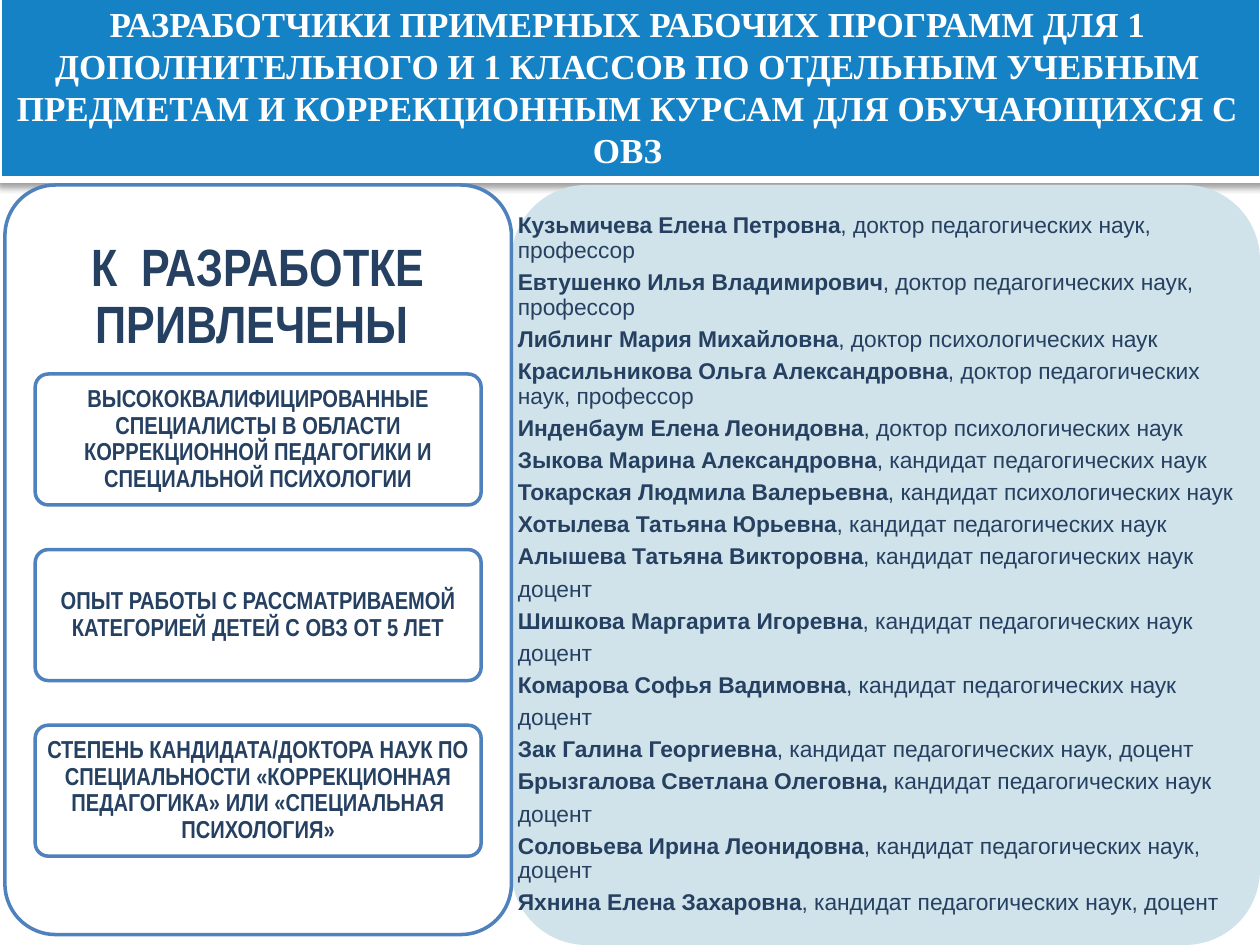
from dataclasses import dataclass

from lxml import etree
from pptx import Presentation
from pptx.dml.color import RGBColor
from pptx.enum import shapes, text
from pptx.oxml import ns
from pptx.util import Cm, Pt


@dataclass(frozen=True)
class Theme:
    band: str = "1682C6"
    panel: str = "D0E3EA"
    outline: str = "4F81BD"
    ink: str = "254061"
    white: str = "FFFFFF"
    title_font: str = "Times New Roman"
    card_font: str = "Arial Narrow"
    list_font: str = "Arial"
    title_size: float = 20
    heading_size: float = 30
    card_size: float = 14
    list_size: float = 13


THEME = Theme()

TITLE = ("РАЗРАБОТЧИКИ ПРИМЕРНЫХ РАБОЧИХ ПРОГРАММ ДЛЯ 1 ДОПОЛНИТЕЛЬНОГО И 1 КЛАССОВ "
         "ПО ОТДЕЛЬНЫМ УЧЕБНЫМ ПРЕДМЕТАМ И КОРРЕКЦИОННЫМ КУРСАМ ДЛЯ ОБУЧАЮЩИХСЯ С ОВЗ")
HEADING = "К  РАЗРАБОТКЕ ПРИВЛЕЧЕНЫ "
REQUIREMENTS = [
    "ВЫСОКОКВАЛИФИЦИРОВАННЫЕ СПЕЦИАЛИСТЫ В ОБЛАСТИ КОРРЕКЦИОННОЙ ПЕДАГОГИКИ "
    "И СПЕЦИАЛЬНОЙ ПСИХОЛОГИИ",
    "ОПЫТ РАБОТЫ С РАССМАТРИВАЕМОЙ КАТЕГОРИЕЙ ДЕТЕЙ С ОВЗ ОТ 5 ЛЕТ",
    "СТЕПЕНЬ КАНДИДАТА/ДОКТОРА НАУК ПО СПЕЦИАЛЬНОСТИ «КОРРЕКЦИОННАЯ ПЕДАГОГИКА» "
    "ИЛИ «СПЕЦИАЛЬНАЯ ПСИХОЛОГИЯ»",
]
DEVELOPERS = [
    ("Кузьмичева Елена Петровна", ", доктор педагогических наук, профессор"),
    ("Евтушенко Илья Владимирович", ", доктор педагогических наук, профессор"),
    ("Либлинг Мария Михайловна", ", доктор психологических наук"),
    ("Красильникова Ольга Александровна", ", доктор педагогических наук, профессор"),
    ("Инденбаум Елена Леонидовна", ", доктор психологических наук"),
    ("Зыкова Марина Александровна", ", кандидат педагогических наук"),
    ("Токарская Людмила Валерьевна", ", кандидат психологических наук"),
    ("Хотылева Татьяна Юрьевна", ", кандидат педагогических наук"),
    ("Алышева Татьяна Викторовна", ", кандидат педагогических наук"),
    ("", "доцент"),
    ("Шишкова Маргарита Игоревна", ", кандидат педагогических наук"),
    ("", "доцент"),
    ("Комарова Софья Вадимовна", ", кандидат педагогических наук"),
    ("", "доцент"),
    ("Зак Галина Георгиевна", ", кандидат педагогических наук, доцент"),
    ("Брызгалова Светлана Олеговна, ", "кандидат педагогических наук"),
    ("", "доцент"),
    ("Соловьева Ирина Леонидовна", ", кандидат педагогических наук, доцент"),
    ("Яхнина Елена Захаровна", ", кандидат педагогических наук, доцент"),
]


def add_text(paragraph, content, font, size, color=THEME.ink, bold=True):
    run = paragraph.add_run()
    run.text = content
    run.font.name, run.font.size, run.font.bold = font, Pt(size), bold
    run.font.color.rgb = RGBColor.from_string(color)


def format_paragraph(paragraph, align, line_spacing=0.9, space_after=0):
    paragraph.alignment = align
    paragraph.line_spacing = line_spacing
    paragraph.space_before, paragraph.space_after = Pt(0), Pt(space_after)


def format_frame(shape, margin_x, margin_y, anchor=text.MSO_ANCHOR.MIDDLE):
    frame = shape.text_frame
    frame.word_wrap = True
    frame.auto_size = text.MSO_AUTO_SIZE.NONE
    frame.vertical_anchor = anchor
    frame.margin_left = frame.margin_right = Cm(margin_x)
    frame.margin_top = frame.margin_bottom = Cm(margin_y)
    return frame


def add_box(slide, kind, left, top, width, height, fill, line=None, line_width=2):
    box = slide.shapes.add_shape(kind, Cm(left), Cm(top), Cm(width), Cm(height))
    box.shadow.inherit = False
    box.fill.solid()
    box.fill.fore_color.rgb = RGBColor.from_string(fill)
    if line:
        box.line.color.rgb = RGBColor.from_string(line)
        box.line.width = Pt(line_width)
    else:
        box.line.fill.background()
    if kind == shapes.MSO_SHAPE.ROUNDED_RECTANGLE:
        box.adjustments[0] = 0.1
    return box


def add_lower_shadow(shape):
    effects = shape.element.spPr.find(ns.qn("a:effectLst"))
    shadow = etree.SubElement(effects, ns.qn("a:outerShdw"), blurRad=str(Pt(4)),
                              dist=str(Pt(2)), dir="5400000", rotWithShape="0")
    color = etree.SubElement(shadow, ns.qn("a:srgbClr"), val="000000")
    etree.SubElement(color, ns.qn("a:alpha"), val="38000")


def place_in_front(placeholder, left, top, width, height):
    placeholder.left, placeholder.top = Cm(left), Cm(top)
    placeholder.width, placeholder.height = Cm(width), Cm(height)
    placeholder.element.getparent().append(placeholder.element)


def add_requirements(slide):
    rounded = shapes.MSO_SHAPE.ROUNDED_RECTANGLE
    center = text.PP_ALIGN.CENTER
    add_box(slide, rounded, 0.1, 3.73, 10.21, 15.11, THEME.white, THEME.outline)
    heading = slide.shapes.add_textbox(Cm(0.1), Cm(3.73), Cm(10.21), Cm(4.55))
    paragraph = format_frame(heading, 0.3, 0.3).paragraphs[0]
    format_paragraph(paragraph, center)
    add_text(paragraph, HEADING, THEME.card_font, THEME.heading_size)
    for index, requirement in enumerate(REQUIREMENTS):
        card = add_box(slide, rounded, 0.71, 7.54 + 3.54 * index, 8.99, 2.64,
                       THEME.white, THEME.outline)
        # The rounded corners add to the side margins.
        paragraph = format_frame(card, 0.1, 0.08).paragraphs[0]
        format_paragraph(paragraph, center)
        add_text(paragraph, requirement, THEME.card_font, THEME.card_size)


def fill_developers(body):
    place_in_front(body, 10.31, 3.73, 15.09, 15.32)
    frame = format_frame(body, 0.13, 0.13)
    for index, (name, degree) in enumerate(DEVELOPERS):
        paragraph = frame.add_paragraph() if index else frame.paragraphs[0]
        format_paragraph(paragraph, text.PP_ALIGN.LEFT, space_after=4.3)
        properties = paragraph._p.get_or_add_pPr()
        properties.set("marL", "0")
        properties.set("indent", "0")
        etree.SubElement(properties, ns.qn("a:buNone"))
        if name:
            add_text(paragraph, name, THEME.list_font, THEME.list_size)
        add_text(paragraph, degree, THEME.list_font, THEME.list_size, bold=False)


def fill_title(title):
    place_in_front(title, -0.1, -0.08, 25.5, 4.52)
    paragraph = format_frame(title, 0.25, 0.13, text.MSO_ANCHOR.TOP).paragraphs[0]
    format_paragraph(paragraph, text.PP_ALIGN.CENTER, line_spacing=1.0)
    add_text(paragraph, TITLE, THEME.title_font, THEME.title_size, THEME.white)


def main():
    presentation = Presentation()
    presentation.slide_width, presentation.slide_height = Cm(25.4), Cm(19.05)
    slide = presentation.slides.add_slide(presentation.slide_layouts[1])
    title, body = slide.placeholders
    band = add_box(slide, shapes.MSO_SHAPE.RECTANGLE, -0.03, -0.08, 25.48, 3.71,
                   THEME.band, THEME.white, 4)
    add_lower_shadow(band)
    add_box(slide, shapes.MSO_SHAPE.ROUNDED_RECTANGLE, 10.31, 3.73, 15.09, 15.32,
            THEME.panel)
    add_requirements(slide)
    fill_developers(body)
    fill_title(title)
    presentation.save("out.pptx")


if __name__ == "__main__":
    main()
